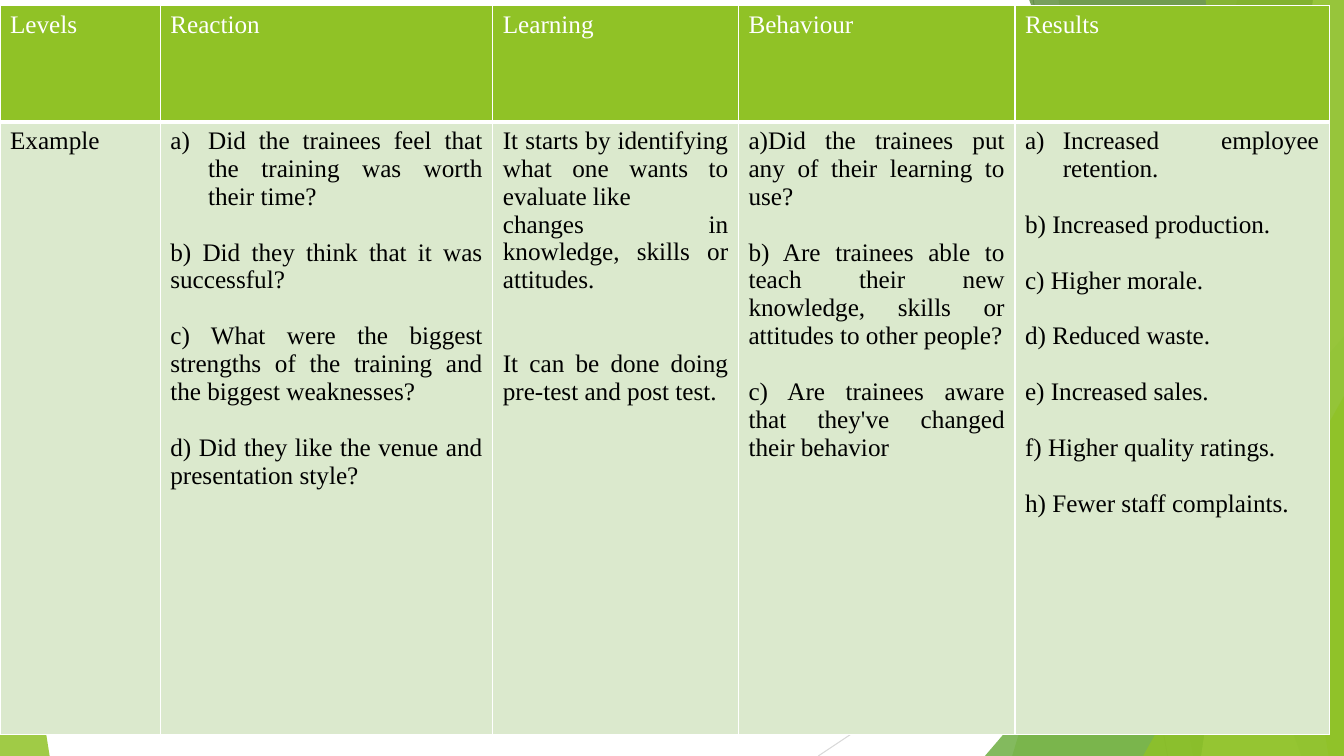
from lxml.etree import SubElement
from pptx import Presentation
from pptx.dml.color import RGBColor
from pptx.enum.shapes import MSO_CONNECTOR, MSO_SHAPE
from pptx.enum.text import PP_ALIGN
from pptx.oxml import parse_xml
from pptx.oxml.ns import nsdecls, qn
from pptx.util import Pt


def paint(fill, color, opacity=100):
    fill.solid()
    fill.fore_color.rgb = RGBColor.from_string(color)
    if opacity < 100:
        color_element = fill._xPr.find(qn("a:solidFill"))[0]
        SubElement(color_element, qn("a:alpha"), val=str(opacity * 1000))


def write(paragraph, text, color="000000", size=18, font="Times New Roman", gap=0, numbered=False):
    paragraph.alignment = PP_ALIGN.JUSTIFY
    paragraph.space_before = Pt(gap)
    run = paragraph.add_run()
    run.text = text
    run.font.name = font
    run.font.size = Pt(size)
    run.font.color.rgb = RGBColor.from_string(color)
    if numbered:
        properties = paragraph._p.get_or_add_pPr()
        properties.set("marL", str(Pt(27)))
        properties.set("indent", str(-Pt(27)))
        SubElement(properties, qn("a:buFont"), typeface="+mj-lt")
        SubElement(properties, qn("a:buAutoNum"), type="alphaLcParenR")


presentation = Presentation()
presentation.slide_width, presentation.slide_height = Pt(960), Pt(540)
slide = presentation.slides.add_slide(presentation.slide_layouts[6])
shapes = slide.shapes

# Thin grey background lines
for x1, y1, x2, y2, color in [
    (738, 0, 834, 540, "BFBFBF"),
    (960, 290, 584.5, 540, "D9D9D9"),
]:
    line = shapes.add_connector(MSO_CONNECTOR.STRAIGHT, Pt(x1), Pt(y1), Pt(x2), Pt(y2))
    line.line.color.rgb = RGBColor.from_string(color)
    line.line.width = Pt(0.75)
    SubElement(line._element.spPr, qn("a:effectLst"))

# Translucent green facets: bands run to the right edge, triangles have (left, top, width, height, apex)
facets = [
    ("band", (884, 723), "90C226", 30),
    ("band", (756, 852), "90C226", 20),
    ("triangle", (703.5, 240, 256.5, 300, 1), "54A021", 72),
    ("band", (735, 929.5), "3F7819", 70),
    ("band", (938, 858), "C0E474", 70),
    ("band", (861, 949), "90C226", 65),
    ("triangle", (816.5, 283, 143.5, 257, 1), "90C226", 80),
    ("triangle", (0, 316, 35.5, 224, 0), "90C226", 85),
]
for kind, geometry, color, opacity in facets:
    if kind == "band":
        top_x, bottom_x = geometry
        builder = shapes.build_freeform(Pt(top_x), Pt(-0.6))
        corners = [(960, -0.6), (960, 540), (bottom_x, 540)]
        builder.add_line_segments([(Pt(x), Pt(y)) for x, y in corners], close=True)
        facet = builder.convert_to_shape()
    else:
        *box, apex = geometry
        facet = shapes.add_shape(MSO_SHAPE.ISOSCELES_TRIANGLE, *map(Pt, box))
        facet.adjustments[0] = apex
    paint(facet.fill, color, opacity)
    facet.line.fill.background()
    facet.shadow.inherit = False

# Table content: a heading and (gap before, text) paragraphs per column
columns = [
    ("Levels", 114.5, [(0, "Example")]),
    ("Reaction", 237.5, [
        (0, "Did the trainees feel that the training was worth their time?"),
        (20, "b) Did they think that it was successful?"),
        (20, "c) What were the biggest strengths of the training and the biggest weaknesses?"),
        (20, "d) Did they like the venue and presentation style?"),
    ]),
    ("Learning", 175.5, [
        (0, "It starts by identifying what one wants to evaluate like"),
        (0, "changes in knowledge, skills or attitudes."),
        (40, "It can be done doing pre-test and post test."),
    ]),
    ("Behaviour", 197.5, [
        (0, "a)Did the trainees put any of their learning to use?"),
        (20, "b) Are trainees able to teach their new knowledge, skills or attitudes to other people?"),
        (20, "c) Are trainees aware that they've changed their behavior"),
    ]),
    ("Results", 224.5, [
        (0, "Increased employee retention."),
        (20, "b) Increased production."),
        (20, "c) Higher morale."),
        (20, "d) Reduced waste."),
        (20, "e) Increased sales."),
        (20, "f) Higher quality ratings."),
        (20, "h) Fewer staff complaints."),
    ]),
]
row_heights = [83, 437.5]
table_width = sum(width for _, width, _ in columns)
table = shapes.add_table(2, len(columns), Pt(0), Pt(4), Pt(table_width), Pt(sum(row_heights))).table
for row, height in zip(table.rows, row_heights):
    row.height = Pt(height)

for index, (heading, width, examples) in enumerate(columns):
    table.columns[index].width = Pt(width)
    header_cell, example_cell = table.cell(0, index), table.cell(1, index)
    write(header_cell.text_frame.paragraphs[0], heading, color="FFFFFF")
    frame = example_cell.text_frame
    for number, (gap, text) in enumerate(examples):
        paragraph = frame.add_paragraph() if number else frame.paragraphs[0]
        is_numbered = number == 0 and heading in ("Reaction", "Results")
        write(paragraph, text, gap=gap, numbered=is_numbered)

    # Fills and white borders, with a thick rule under the header
    paint(header_cell.fill, "90C226")
    paint(example_cell.fill, "DBE9CD")
    for cell, thick_side in [(header_cell, "B"), (example_cell, "T")]:
        for position, side in enumerate("LRTB"):
            border_width = Pt(3 if side == thick_side else 1)
            border = parse_xml(
                f'<a:ln{side} {nsdecls("a")} w="{border_width}"><a:solidFill>'
                f'<a:srgbClr val="FFFFFF"/></a:solidFill></a:ln{side}>'
            )
            cell._tc.get_or_add_tcPr().insert(position, border)

presentation.save("out.pptx")
